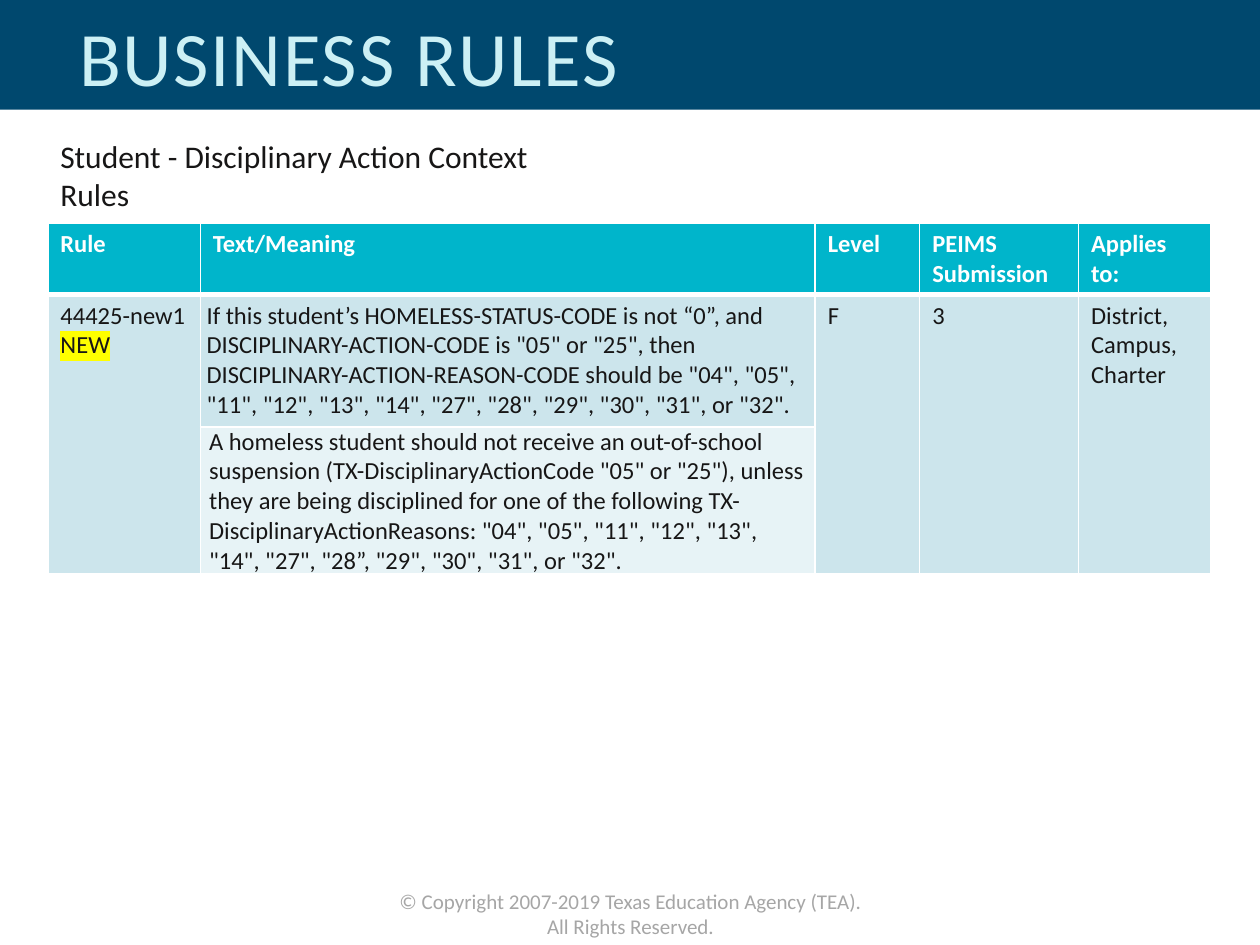
from dataclasses import dataclass

import pptx
import pptx.dml.color
import pptx.enum.text
import pptx.oxml
import pptx.oxml.ns
import pptx.util
from pptx.dml.color import RGBColor
from pptx.enum.text import MSO_ANCHOR, PP_ALIGN
from pptx.util import Inches

FONT = "Calibri"
WHITE = RGBColor(0xFF, 0xFF, 0xFF)
NAVY = RGBColor(0x00, 0x48, 0x6E)
TEAL = RGBColor(0x00, 0xB5, 0xCB)
PALE_AQUA = RGBColor(0xCC, 0xF0, 0xF5)
LIGHT_BLUE = RGBColor(0xCC, 0xE5, 0xEC)
LIGHTER_BLUE = RGBColor(0xE7, 0xF3, 0xF6)
INK = RGBColor(0x17, 0x16, 0x16)
GREY = RGBColor(0xA6, 0xA6, 0xA6)
YELLOW = RGBColor(0xFF, 0xFF, 0x00)

COLUMN_WIDTHS = (1.21, 4.88, 0.83, 1.26, 1.05)
ROW_HEIGHTS = (0.56, 1.05, 1.17)


@dataclass(frozen=True)
class RuleCell:
    row: int
    column: int
    text: str
    fill: RGBColor = LIGHT_BLUE
    margin_x: float = 0.1
    margin_y: float = 0.05
    row_span: int = 1


HEADINGS = ("Rule", "Text/Meaning", "Level", "PEIMS\nSubmission", "Applies to:")
RULE_CELLS = (
    RuleCell(1, 0, "44425-new1\nNEW", row_span=2),
    RuleCell(
        1, 1,
        "If this student’s HOMELESS-STATUS-CODE is not “0”, and "
        'DISCIPLINARY-ACTION-CODE is "05" or "25", then '
        'DISCIPLINARY-ACTION-REASON-CODE should be "04", "05", "11", "12", '
        '"13", "14", "27", "28", "29", "30", "31", or "32".',
        margin_x=0.05,
    ),
    RuleCell(1, 2, "F", row_span=2),
    RuleCell(1, 3, "3", row_span=2),
    RuleCell(1, 4, "District,\nCampus,\nCharter", row_span=2),
    RuleCell(
        2, 1,
        "A homeless student should not receive an out-of-school suspension "
        '(TX-DisciplinaryActionCode "05" or "25"), unless they are being '
        "disciplined for one of the following TX-DisciplinaryActionReasons: "
        '"04", "05", "11", "12", "13", "14", "27", "28”, "29", "30", "31", '
        'or "32".',
        fill=LIGHTER_BLUE, margin_x=0.07, margin_y=0,
    ),
)


def write_text(text_frame, text: str, *, size: float, color: RGBColor,
               bold: bool = False, align=PP_ALIGN.LEFT,
               line_spacing: float = 1.0, spacing: float = 0) -> None:
    text_frame.word_wrap = True
    for index, line in enumerate(text.split("\n")):
        paragraph = text_frame.add_paragraph() if index else text_frame.paragraphs[0]
        paragraph.alignment = align
        paragraph.line_spacing = line_spacing
        run = paragraph.add_run()
        run.text = line
        run.font.name = FONT
        run.font.size = pptx.util.Pt(size)
        run.font.bold = bold
        run.font.color.rgb = color
        if spacing:
            run.font._element.set("spc", str(int(spacing * 100)))


def add_text(slide, left: float, top: float, width: float, height: float,
             text: str, *, anchor=MSO_ANCHOR.TOP, **text_format) -> None:
    shape = slide.shapes.add_textbox(
        Inches(left), Inches(top), Inches(width), Inches(height))
    shape.text_frame.vertical_anchor = anchor
    write_text(shape.text_frame, text, **text_format)


def highlight(run, color: RGBColor) -> None:
    element = pptx.oxml.parse_xml(
        f'<a:highlight {pptx.oxml.ns.nsdecls("a")}>'
        f'<a:srgbClr val="{color}"/></a:highlight>')
    fill = run.font._element.find(pptx.oxml.ns.qn("a:solidFill"))
    fill.addnext(element)


def set_borders(cell, **widths: float) -> None:
    properties = cell._tc.get_or_add_tcPr()
    for index, side in enumerate("LRTB"):
        width = pptx.util.Pt(widths.get(side, 1))
        properties.insert(index, pptx.oxml.parse_xml(
            f'<a:ln{side} {pptx.oxml.ns.nsdecls("a")} w="{width}">'
            f'<a:solidFill><a:srgbClr val="{WHITE}"/></a:solidFill></a:ln{side}>'))


def fill_cell(table, content: RuleCell, **text_format) -> None:
    cell = table.cell(content.row, content.column)
    if content.row_span > 1:
        cell.merge(table.cell(content.row + content.row_span - 1, content.column))
    cell.margin_left = cell.margin_right = Inches(content.margin_x)
    cell.margin_top = cell.margin_bottom = Inches(content.margin_y)
    cell.fill.solid()
    cell.fill.fore_color.rgb = content.fill
    write_text(cell.text_frame, content.text, size=14, **text_format)


def add_rules_table(slide) -> None:
    table = slide.shapes.add_table(
        len(ROW_HEIGHTS), len(COLUMN_WIDTHS), Inches(0.38), Inches(1.77),
        Inches(sum(COLUMN_WIDTHS)), Inches(sum(ROW_HEIGHTS))).table
    for column, width in zip(table.columns, COLUMN_WIDTHS):
        column.width = Inches(width)
    for row, height in zip(table.rows, ROW_HEIGHTS):
        row.height = Inches(height)

    for column, heading in enumerate(HEADINGS):
        fill_cell(table, RuleCell(0, column, heading, TEAL), color=WHITE, bold=True)
    for content in RULE_CELLS:
        fill_cell(table, content, color=INK)
    highlight(table.cell(1, 0).text_frame.paragraphs[1].runs[0], YELLOW)

    for row_index in range(len(ROW_HEIGHTS)):
        for column_index in range(len(COLUMN_WIDTHS)):
            cell = table.cell(row_index, column_index)
            if row_index == 0:
                set_borders(cell, B=3)
            elif row_index == 1:
                set_borders(cell, T=3)
            else:
                set_borders(cell)


def main() -> None:
    presentation = pptx.Presentation()
    presentation.slide_width = Inches(10)
    presentation.slide_height = Inches(7.5)
    slide = presentation.slides.add_slide(presentation.slide_layouts[6])

    banner = slide.shapes.add_shape(
        pptx.enum.shapes.MSO_SHAPE.RECTANGLE,
        Inches(0), Inches(0), Inches(10), Inches(0.87))
    banner.shadow.inherit = False
    banner.fill.solid()
    banner.fill.fore_color.rgb = NAVY
    banner.line.fill.background()

    add_text(slide, 3.04, 7, 3.93, 0.3,
             "© Copyright 2007-2019 Texas Education Agency (TEA). All Rights Reserved.",
             size=12, color=GREY, align=PP_ALIGN.CENTER)
    add_text(slide, 0.53, 0.05, 8.28, 0.87, "BUSINESS RULES",
             anchor=MSO_ANCHOR.MIDDLE, size=44, color=PALE_AQUA,
             line_spacing=0.9, spacing=1)
    add_rules_table(slide)
    add_text(slide, 0.38, 1.04, 4.42, 0.4,
             "Student - Disciplinary Action Context Rules", size=18, color=INK)

    presentation.save("out.pptx")


if __name__ == "__main__":
    main()
